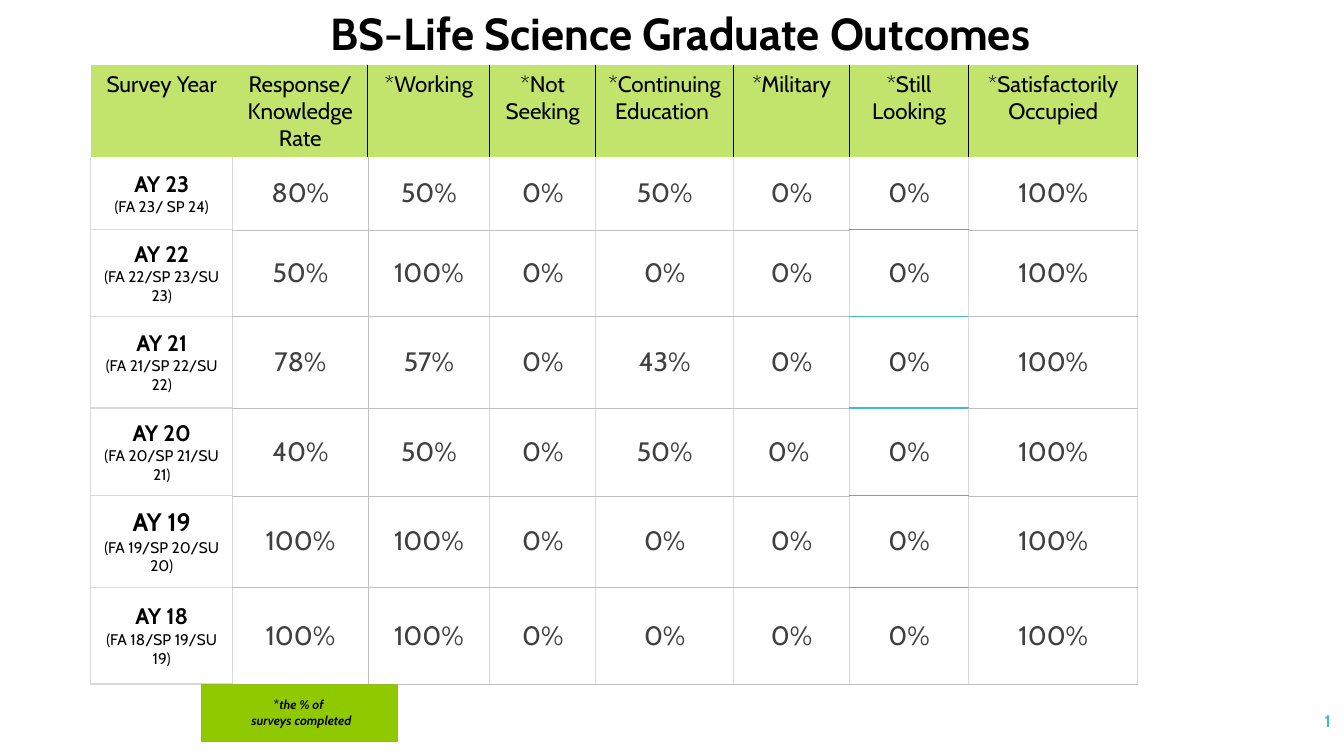
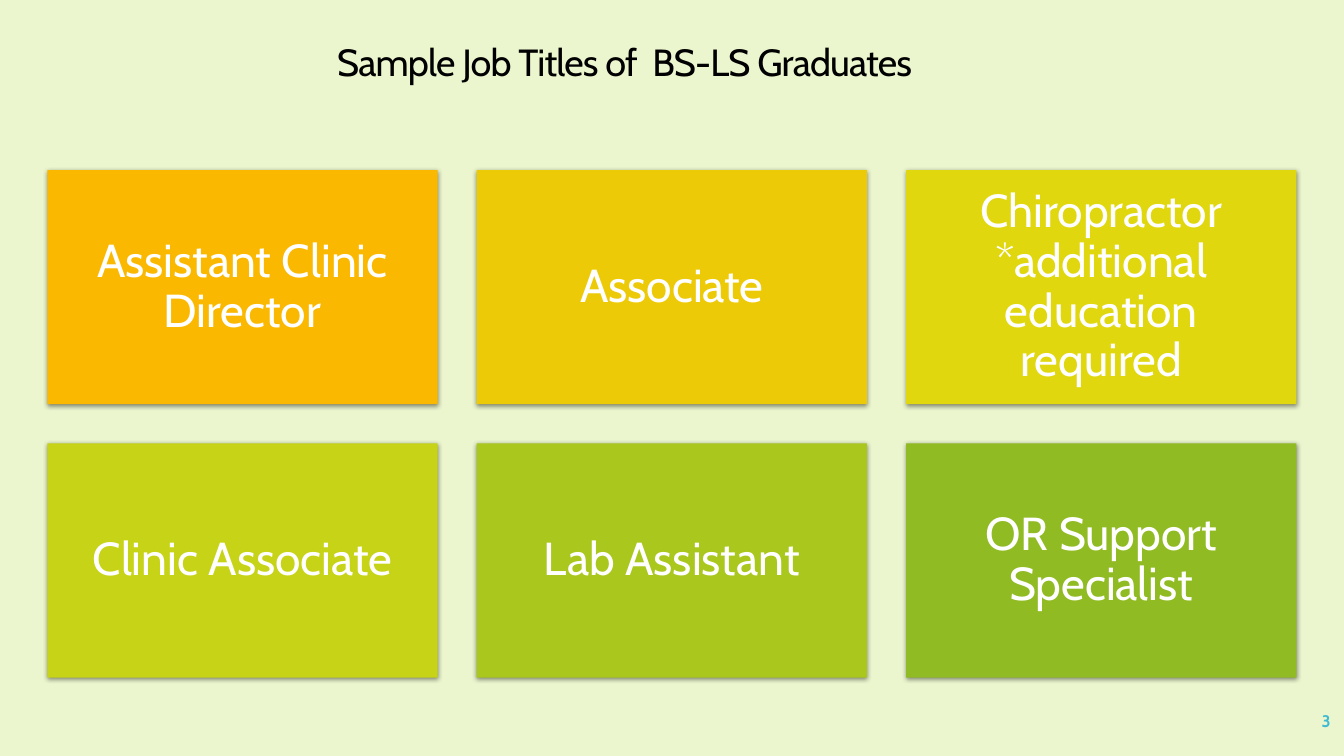
import pptx
import pptx.util
import pptx.dml.color
import pptx.enum.shapes
import pptx.enum.text
import pptx.oxml
import pptx.oxml.ns

Pt = pptx.util.Pt
ALIGN = pptx.enum.text.PP_ALIGN
ANCHOR = pptx.enum.text.MSO_ANCHOR


class Theme:
    font = "Cabin"
    black, white, gray = "000000", "FFFFFF", "404040"
    blue, pale, head = "40BAD2", "EBF6CE", "C2E46D"
    note, edge = "90C900", "90BB23"
    soft, thin = ("D9D9D9", 1), ("BFBFBF", 0.25)
    dark, mark = ("000000", 1), ("40BAD2", 1)
    cards = ["FAB900", "EDCA08", "E0D70F", "C7D316", "A9C71D", "90BB23"]
    size = {"title": 32, "lead": 27, "card": 33, "rate": 19, "year": 16,
            "term": 11, "page": 12, "note": 9}


HEADS = ["Survey Year", "Response/\nKnowledge\nRate", "*Working",
         "*Not\nSeeking", "*Continuing Education ", "*Military",
         "*Still Looking", "*Satisfactorily\nOccupied"]
YEARS = [
    ("AY 23\n(FA 23/ SP 24)", "80%", "50%", "0%", "50%", "0%", "0%", "100%"),
    ("AY 22\n(FA 22/SP 23/SU 23)", "50%", "100%", "0%", "0%", "0%", "0%", "100%"),
    ("AY 21\n(FA 21/SP 22/SU 22)", "78%", "57%", "0%", "43%", "0%", "0%", "100%"),
    ("AY 20\n(FA 20/SP 21/SU 21)", "40%", "50%", "0%", "50%", "0% ", "0%", "100%"),
    ("AY 19\n(FA 19/SP 20/SU 20)", "100%", "100%", "0%", "0%", "0%", "0%", "100%"),
    ("AY 18\n(FA 18/SP 19/SU 19)", "100%", "100%", "0%", "0%", "0%", "0%", "100%"),
]
BIG = {5: 18}  # year rows with a larger heading
WIDTHS = [101.5, 96.5, 87.1, 75.6, 98.6, 82.8, 85, 121]
HEIGHTS = [65.5, 51.8, 61.9, 65.5, 62.6, 65.5, 69.1]
LOOK = 6  # the Still Looking column
JOBS = ["Assistant Clinic Director", "Associate",
        "Chiropractor *additional education required",
        "Clinic Associate", "Lab Assistant", "OR Support Specialist"]


def paint(fill, color):
    fill.solid()
    fill.fore_color.rgb = pptx.dml.color.RGBColor.from_string(color)


def style(para, size, color=Theme.black, bold=False, align=ALIGN.CENTER):
    para.alignment = align
    for run in para.runs:
        font = run.font
        font.name, font.size, font.bold = Theme.font, Pt(size), bold
        font.color.rgb = pptx.dml.color.RGBColor.from_string(color)


def label(slide, box, text, size, color=Theme.black, bold=False,
          align=ALIGN.CENTER, anchor=ANCHOR.TOP):
    frame = slide.shapes.add_textbox(*map(Pt, box)).text_frame
    frame.word_wrap = True
    frame.vertical_anchor = anchor
    frame.text = text
    for para in frame.paragraphs:
        style(para, size, color, bold, align)
    return frame


def block(slide, box, color, line=None, width=0.75):
    shape = slide.shapes.add_shape(
        pptx.enum.shapes.MSO_SHAPE.RECTANGLE, *map(Pt, box))
    shape.shadow.inherit = False
    paint(shape.fill, color)
    if line:
        paint(shape.line.fill, line)
        shape.line.width = Pt(width)
    else:
        shape.line.fill.background()
    return shape


def page(deck, color, number):
    """Add a blank slide with its background and page number."""
    slide = deck.slides.add_slide(deck.slide_layouts[6])
    paint(slide.background.fill, color)
    label(slide, (837.4, 500.4, 120.2, 28.8), number, Theme.size["page"],
          Theme.blue, True, ALIGN.RIGHT, ANCHOR.MIDDLE)
    return slide


def border(cell, edges):
    """Draw the given sides (L, R, T, B) and clear the others."""
    props = cell._tc.get_or_add_tcPr()
    space = pptx.oxml.ns.nsdecls("a")
    for side in "LRTB":
        color, width = edges.get(side) or (None, 0)
        fill = (f'<a:solidFill><a:srgbClr val="{color}"/></a:solidFill>'
                if color else "<a:noFill/>")
        props.append(pptx.oxml.parse_xml(
            f'<a:ln{side} {space} w="{int(width * 12700)}">{fill}</a:ln{side}>'))


def edges(row, col):
    if row == 0:
        return {"L": Theme.dark if col > 1 else None,
                "R": Theme.dark if col > 0 else None}
    if col == 0:
        rule = Theme.soft
    else:
        rule = Theme.mark if col == LOOK else Theme.thin
    return {"L": Theme.thin if col == 2 else Theme.soft,
            "R": Theme.thin if col == 1 else Theme.soft,
            "T": rule if row > 1 else None,
            "B": Theme.thin if row == len(YEARS) and col else rule}


def fill_cell(cell, row, col, text):
    size = Theme.size
    border(cell, edges(row, col))
    paint(cell.fill, Theme.white if row else Theme.head)
    cell.margin_left = cell.margin_right = Pt(8.64)
    cell.margin_top = cell.margin_bottom = Pt(4.32)
    cell.vertical_anchor = ANCHOR.MIDDLE if row else ANCHOR.TOP
    cell.text_frame.text = text
    for rank, para in enumerate(cell.text_frame.paragraphs):
        if row == 0:
            style(para, size["year"])
        elif col:
            style(para, size["rate"], Theme.gray)
        elif rank:
            style(para, size["term"])
        else:
            style(para, BIG.get(row, size["year"]), bold=True)


def outcomes(deck):
    slide = page(deck, Theme.white, "1")
    rows = [HEADS, *YEARS]
    box = (64.8, 46.1, sum(WIDTHS), sum(HEIGHTS))
    table = slide.shapes.add_table(
        len(rows), len(HEADS), *map(Pt, box)).table
    table.first_row = table.horz_banding = False
    for col, width in zip(table.columns, WIDTHS):
        col.width = Pt(width)
    for row, height in zip(table.rows, HEIGHTS):
        row.height = Pt(height)
    for r, row in enumerate(rows):
        for c, text in enumerate(row):
            fill_cell(table.cell(r, c), r, c, text)

    block(slide, (144, 488.9, 139.7, 41), Theme.note, Theme.edge)
    block(slide, (0, 0.7, 957.6, 45.4), Theme.white, Theme.white, 0.85)
    label(slide, (229, 0.7, 580.3, 46.1), "BS-Life Science Graduate Outcomes",
          Theme.size["title"], bold=True, align=ALIGN.LEFT)
    note = label(slide, (157, 494.6, 114.5, 28.8), "*\n surveys completed",
                 Theme.size["note"], bold=True)
    first, last = note.paragraphs
    first.add_run().text = "the % of "
    style(first, Theme.size["note"], bold=True)
    for run in (first.runs[1], last.runs[0]):
        run.font.italic = True


def shade(shape):
    """Give the shape a soft shadow below."""
    old = shape._element.spPr.find(pptx.oxml.ns.qn("a:effectLst"))
    old.append(pptx.oxml.parse_xml(
        f'<a:outerShdw {pptx.oxml.ns.nsdecls("a")} blurRad="44450" '
        'dist="13970" dir="5400000" algn="ctr" rotWithShape="0">'
        '<a:srgbClr val="000000"><a:alpha val="45000"/></a:srgbClr>'
        '</a:outerShdw>'))


def jobs(deck):
    slide = page(deck, Theme.pale, "3")
    title = label(slide, (0, 28.8, 892, 33.8),
                  "Sample Job Titles of  BS-LS Graduates",
                  Theme.size["lead"], anchor=ANCHOR.MIDDLE)
    title.paragraphs[0].line_spacing = 0.9
    title.paragraphs[0].runs[0].font._element.set("spc", "-60")

    left, top, wide, high, gap = 33.8, 121.5, 278.8, 167.3, 27.9
    for i, (job, color) in enumerate(zip(JOBS, Theme.cards)):
        row, col = divmod(i, 3)
        card = block(slide, (left + col * (wide + gap),
                             top + row * (high + gap), wide, high), color)
        shade(card)
        frame = card.text_frame
        frame.word_wrap = True
        frame.vertical_anchor = ANCHOR.MIDDLE
        frame.margin_left = frame.margin_right = Pt(10)
        frame.margin_top = frame.margin_bottom = Pt(10)
        frame.text = job
        frame.paragraphs[0].line_spacing = 0.9
        style(frame.paragraphs[0], Theme.size["card"], Theme.white)


def main():
    deck = pptx.Presentation()
    deck.slide_width, deck.slide_height = Pt(960), Pt(540)
    outcomes(deck)
    jobs(deck)
    deck.save("out.pptx")


if __name__ == "__main__":
    main()
